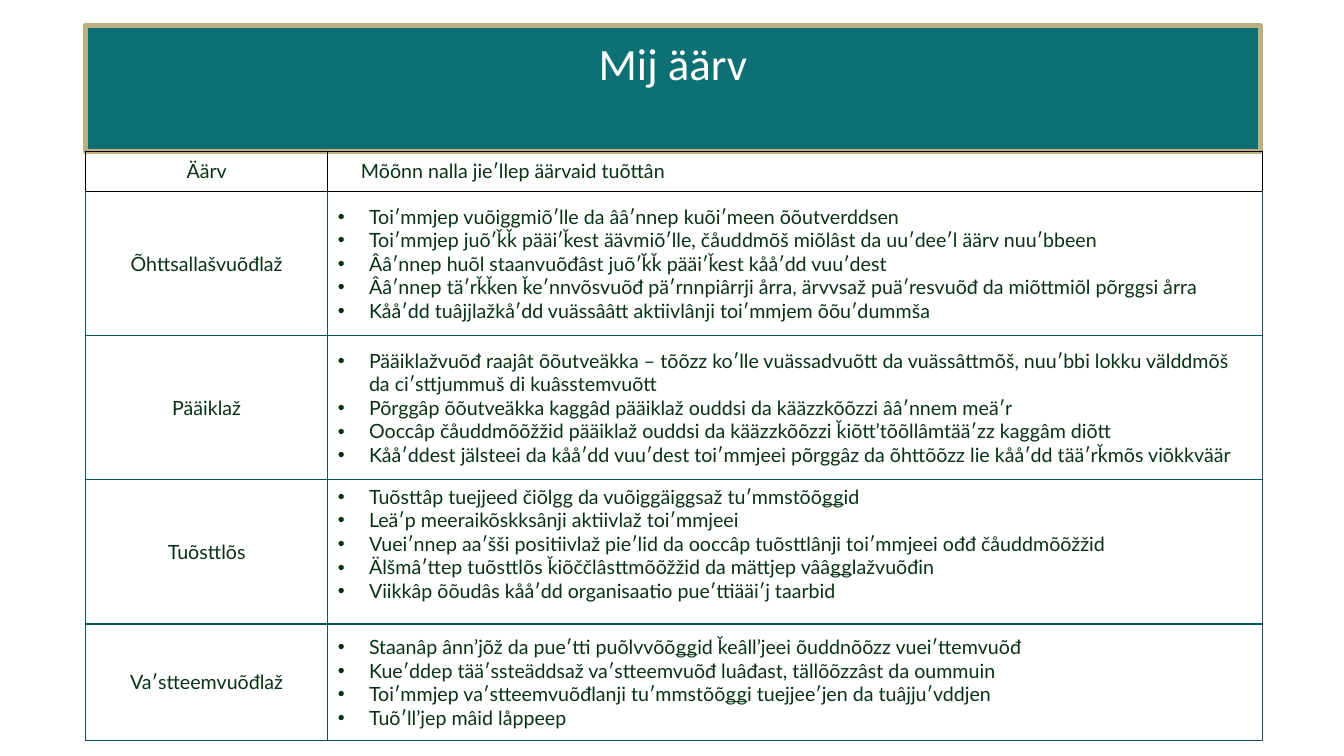
from lxml import etree
from pptx import Presentation
from pptx import util as u
from pptx.dml.color import RGBColor
from pptx.enum import text
from pptx.oxml.ns import qn

TEAL, GOLD, WHITE = "0D7075", "BCAF82", "FFFFFF"
INK, RULE, BLACK = "083213", "0F5064", "000000"
COLS = [2.4, 9.27]
ROWS = [0.4, 1.43, 1.43, 1.43, 1.16]
HEADER = ("Äärv", "Mõõnn nalla jieʹllep äärvaid tuõttân")
VALUES = [
    ("Õhttsallašvuõđlaž", [
        "Toiʹmmjep vuõiggmiõʹlle da ââʹnnep kuõiʹmeen õõutverddsen",
        "Toiʹmmjep juõʹǩǩ pääiʹǩest äävmiõʹlle, čåuddmõš miõlâst da uuʹdeeʹl äärv nuuʹbbeen",
        "Ââʹnnep huõl staanvuõđâst juõʹǩǩ pääiʹǩest kååʹdd vuuʹdest",
        "Ââʹnnep täʹrǩǩen ǩeʹnnvõsvuõđ päʹrnnpiârrji årra, ärvvsaž puäʹresvuõđ da miõttmiõl põrggsi årra",
        "Kååʹdd tuâjjlažkåʹdd vuässââtt aktiivlânji toiʹmmjem õõuʹdummša",
    ]),
    ("Pääiklaž", [
        "Pääiklažvuõđ raajât õõutveäkka – tõõzz koʹlle vuässadvuõtt da vuässâttmõš, "
        "nuuʹbbi lokku välddmõš da ciʹsttjummuš di kuâsstemvuõtt",
        "Põrggâp õõutveäkka kaggâd pääiklaž ouddsi da kääzzkõõzzi ââʹnnem meäʹr",
        "Ooccâp čåuddmõõžžid pääiklaž ouddsi da kääzzkõõzzi ǩiõttʼtõõllâmtääʹzz kaggâm diõtt",
        "Kååʹddest jälsteei da kååʹdd vuuʹdest toiʹmmjeei põrggâz da õhttõõzz lie kååʹdd tääʹrǩmõs viõkkväär",
    ]),
    ("Tuõsttlõs", [
        "Tuõsttâp tuejjeed čiõlgg da vuõiggäiggsaž tuʹmmstõõǥǥid",
        "Leäʹp meeraikõskksânji aktiivlaž toiʹmmjeei",
        "Vueiʹnnep aaʹšši positiivlaž pieʹlid da ooccâp tuõsttlânji toiʹmmjeei ođđ čåuddmõõžžid",
        "Älšmâʹttep tuõsttlõs ǩiõččlâsttmõõžžid da mättjep vââǥǥlažvuõđin",
        "Viikkâp õõudâs kååʹdd organisaatio pueʹttiääiʹj taarbid",
    ]),
    ("Vaʹstteemvuõđlaž", [
        "Staanâp ânnʼjõž da pueʹtti puõlvvõõǥǥid ǩeâllʼjeei õuddnõõzz vueiʹttemvuõđ",
        "Kueʹddep tääʹssteäddsaž vaʹstteemvuõđ luâđast, tällõõzzâst da oummuin",
        "Toiʹmmjep vaʹstteemvuõđlanji tuʹmmstõõǥǥi tuejjeeʹjen da tuâjjuʹvddjen",
        "Tuõʹllʼjep mâid låppeep",
    ]),
]


def rgb(color):
    return RGBColor.from_string(color)


def add_run(p, content, font, size, color):
    r = p.add_run()
    r.text = content
    r.font.name, r.font.size = font, u.Pt(size)
    r.font.bold = False
    r.font.color.rgb = rgb(color)


def add_title(s, content):
    sp = s.shapes.title
    sp.left, sp.top = u.Inches(0.85), u.Inches(0.25)
    sp.width, sp.height = u.Inches(11.65), u.Inches(1.25)
    sp.fill.solid()
    sp.fill.fore_color.rgb = rgb(TEAL)
    sp.line.color.rgb = rgb(GOLD)
    sp.line.width = u.Pt(3.5)
    tf = sp.text_frame
    tf.auto_size = text.MSO_AUTO_SIZE.NONE
    tf.vertical_anchor = text.MSO_ANCHOR.TOP
    tf.margin_left = tf.margin_right = u.Inches(0.39)
    tf.margin_top, tf.margin_bottom = u.Inches(0.16), u.Inches(0.12)
    p = tf.paragraphs[0]
    p.alignment = text.PP_ALIGN.CENTER
    p.line_spacing = 0.9
    add_run(p, content, "Calibri", 32, WHITE)


def set_borders(cell, colors):
    tcPr = cell._tc.get_or_add_tcPr()
    for i, (side, color) in enumerate(zip("LRTB", colors)):
        ln = etree.Element(qn(f"a:ln{side}"), w=str(u.Pt(1)))
        fill = etree.SubElement(ln, qn("a:solidFill"))
        etree.SubElement(fill, qn("a:srgbClr"), val=color)
        tcPr.insert(i, ln)


def indent(p, left, hanging=0):
    pPr = p._p.get_or_add_pPr()
    pPr.set("marL", str(u.Inches(left)))
    pPr.set("indent", str(-u.Inches(hanging)))
    return pPr


def add_bullet(p):
    pPr = indent(p, 0.31, 0.31)
    etree.SubElement(pPr, qn("a:buFont"), typeface="Arial")
    etree.SubElement(pPr, qn("a:buChar"), char="•")


def fill_cell(cell, lines, borders, centred=False, bullets=False):
    cell.fill.background()
    cell.vertical_anchor = text.MSO_ANCHOR.MIDDLE
    set_borders(cell, borders)
    tf = cell.text_frame
    for i, line in enumerate(lines):
        p = tf.add_paragraph() if i else tf.paragraphs[0]
        if bullets:
            add_bullet(p)
        if centred:
            p.alignment = text.PP_ALIGN.CENTER
        add_run(p, line, "Lato", 14, INK)


def add_values_table(s):
    frame = s.shapes.add_table(len(ROWS), len(COLS), u.Inches(0.85), u.Inches(1.5),
                               u.Inches(sum(COLS)), u.Inches(sum(ROWS)))
    table = frame.table
    table.first_row = table.horz_banding = False
    for column, width in zip(table.columns, COLS):
        column.width = u.Inches(width)
    for row, height in zip(table.rows, ROWS):
        row.height = u.Inches(height)
    fill_cell(table.cell(0, 0), [HEADER[0]], [BLACK] * 4, centred=True)
    fill_cell(table.cell(0, 1), [HEADER[1]], [BLACK] * 4)
    indent(table.cell(0, 1).text_frame.paragraphs[0], 0.23)
    for i, (name, promises) in enumerate(VALUES, 1):
        borders = [RULE, RULE, BLACK if i == 1 else RULE, RULE]
        fill_cell(table.cell(i, 0), [name], borders, centred=True)
        fill_cell(table.cell(i, 1), promises, borders, bullets=True)
    table.cell(3, 1).vertical_anchor = text.MSO_ANCHOR.TOP


def main():
    prs = Presentation()
    prs.slide_width, prs.slide_height = u.Inches(13.33), u.Inches(7.5)
    s = prs.slides.add_slide(prs.slide_layouts[5])
    add_title(s, "Mij äärv")
    add_values_table(s)
    prs.save("out.pptx")


if __name__ == "__main__":
    main()
